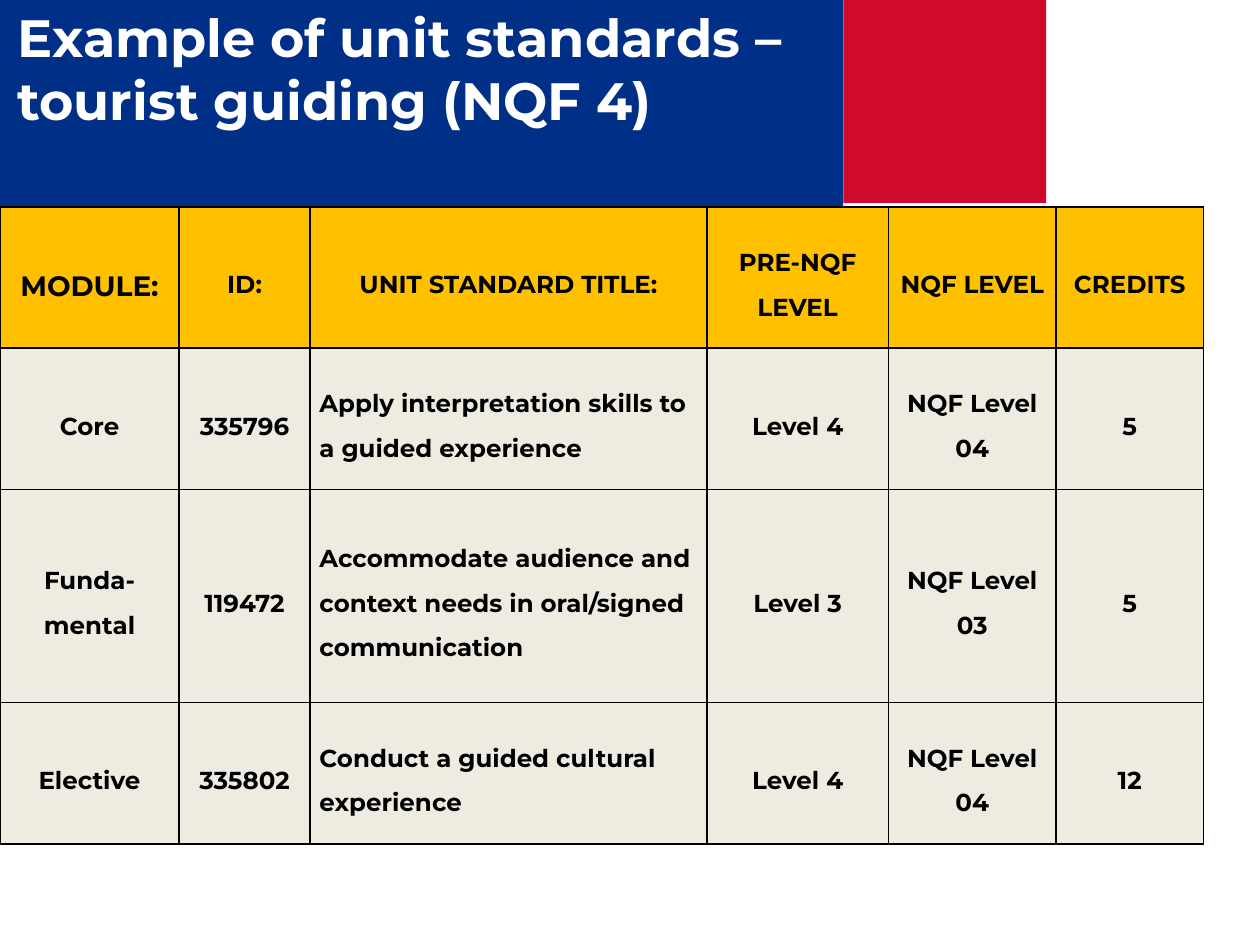
from lxml.etree import SubElement
from pptx import Presentation
from pptx.dml.color import RGBColor
from pptx.enum.shapes import MSO_SHAPE
from pptx.enum.text import MSO_ANCHOR, MSO_AUTO_SIZE, PP_ALIGN
from pptx.oxml.ns import qn
from pptx.util import Cm, Pt

COLOURS = {
    "blue": "002F87",
    "red": "CF0A2C",
    "header": "FFC000",
    "body": "EEECE1",
    "black": "000000",
    "white": "FFFFFF",
}
FONT = "Montserrat"
BLUE_SIDE, RED_SIDE = 17, 4.09
TABLE_TOP = 4.17
COLUMN_WIDTHS = [3.61, 2.64, 8, 3.66, 3.38, 2.97]
ROW_HEIGHTS = [2.85, 2.85, 4.29, 2.85]
TITLE_COLUMN = 2
CELL_FORMAT = {
    "margin_left": Cm(0.19),
    "margin_right": Cm(0.19),
    "margin_top": 0,
    "margin_bottom": 0,
    "vertical_anchor": MSO_ANCHOR.MIDDLE,
}
ROWS = [
    ["MODULE:", "ID:", "UNIT STANDARD TITLE:", "PRE-NQF LEVEL", "NQF LEVEL", "CREDITS"],
    ["Core", "335796", "Apply interpretation skills to a guided experience",
     "Level 4", "NQF Level 04", "5"],
    ["Funda-mental", "119472",
     "Accommodate audience and context needs in oral/signed communication",
     "Level 3", "NQF Level 03", "5"],
    ["Elective", "335802", "Conduct a guided cultural experience",
     "Level 4", "NQF Level 04", "12"],
]


def colour(name):
    return RGBColor.from_string(COLOURS[name])


def set_format(target, values):
    for name, value in values.items():
        setattr(target, name, value)


def write(frame, text, size, text_colour, para_format):
    para = frame.paragraphs[0]
    set_format(para, para_format)
    span = para.add_run()
    span.text = text
    set_format(span.font, {"name": FONT, "size": Pt(size), "bold": True})
    span.font.color.rgb = colour(text_colour)


def add_square(page, left, side, fill):
    box = page.shapes.add_shape(MSO_SHAPE.RECTANGLE, Cm(left), 0, Cm(side), Cm(side))
    box.shadow.inherit = False
    box.fill.solid()
    box.fill.fore_color.rgb = colour(fill)
    box.line.fill.background()


def add_borders(cell):
    properties = cell._tc.get_or_add_tcPr()
    for side in ("lnL", "lnR", "lnT", "lnB"):
        line = SubElement(properties, qn(f"a:{side}"), w=str(Pt(1)))
        fill = SubElement(line, qn("a:solidFill"))
        SubElement(fill, qn("a:srgbClr"), val=COLOURS["black"])


def fill_cell(cell, text, row, column):
    set_format(cell, CELL_FORMAT)
    add_borders(cell)
    cell.fill.solid()
    cell.fill.fore_color.rgb = colour("body" if row else "header")
    left_aligned = row > 0 and column == TITLE_COLUMN
    write(cell.text_frame, text, 14 if row or column else 16, "black", {
        "alignment": PP_ALIGN.LEFT if left_aligned else PP_ALIGN.CENTER,
        "line_spacing": 1.5,
        "space_after": Pt(8),
    })


def add_unit_table(page):
    table = page.shapes.add_table(
        len(ROWS), len(COLUMN_WIDTHS), 0, Cm(TABLE_TOP),
        Cm(sum(COLUMN_WIDTHS)), Cm(sum(ROW_HEIGHTS))).table
    for column, width in zip(table.columns, COLUMN_WIDTHS):
        column.width = Cm(width)
    for row, height in zip(table.rows, ROW_HEIGHTS):
        row.height = Cm(height)
    for r, texts in enumerate(ROWS):
        for c, text in enumerate(texts):
            fill_cell(table.cell(r, c), text, r, c)


def place_title(page, text):
    """Format the title placeholder and bring it in front of the squares."""
    title = page.shapes.title
    set_format(title, {"left": Cm(0.1), "top": Cm(-0.03),
                       "width": Cm(17.32), "height": Cm(4.11)})
    set_format(title.text_frame, {"word_wrap": True,
                                  "auto_size": MSO_AUTO_SIZE.NONE,
                                  "vertical_anchor": MSO_ANCHOR.TOP})
    write(title.text_frame, text, 30, "white", {"alignment": PP_ALIGN.LEFT})
    page.shapes._spTree.append(title._element)


def main():
    deck = Presentation()
    set_format(deck, {"slide_width": Cm(25.4), "slide_height": Cm(19.05)})
    page = deck.slides.add_slide(deck.slide_layouts[5])
    add_square(page, BLUE_SIDE, RED_SIDE, "red")
    add_square(page, 0, BLUE_SIDE, "blue")
    add_unit_table(page)
    place_title(page, "Example of unit standards – tourist guiding (NQF 4)")
    deck.save("out.pptx")


if __name__ == "__main__":
    main()
